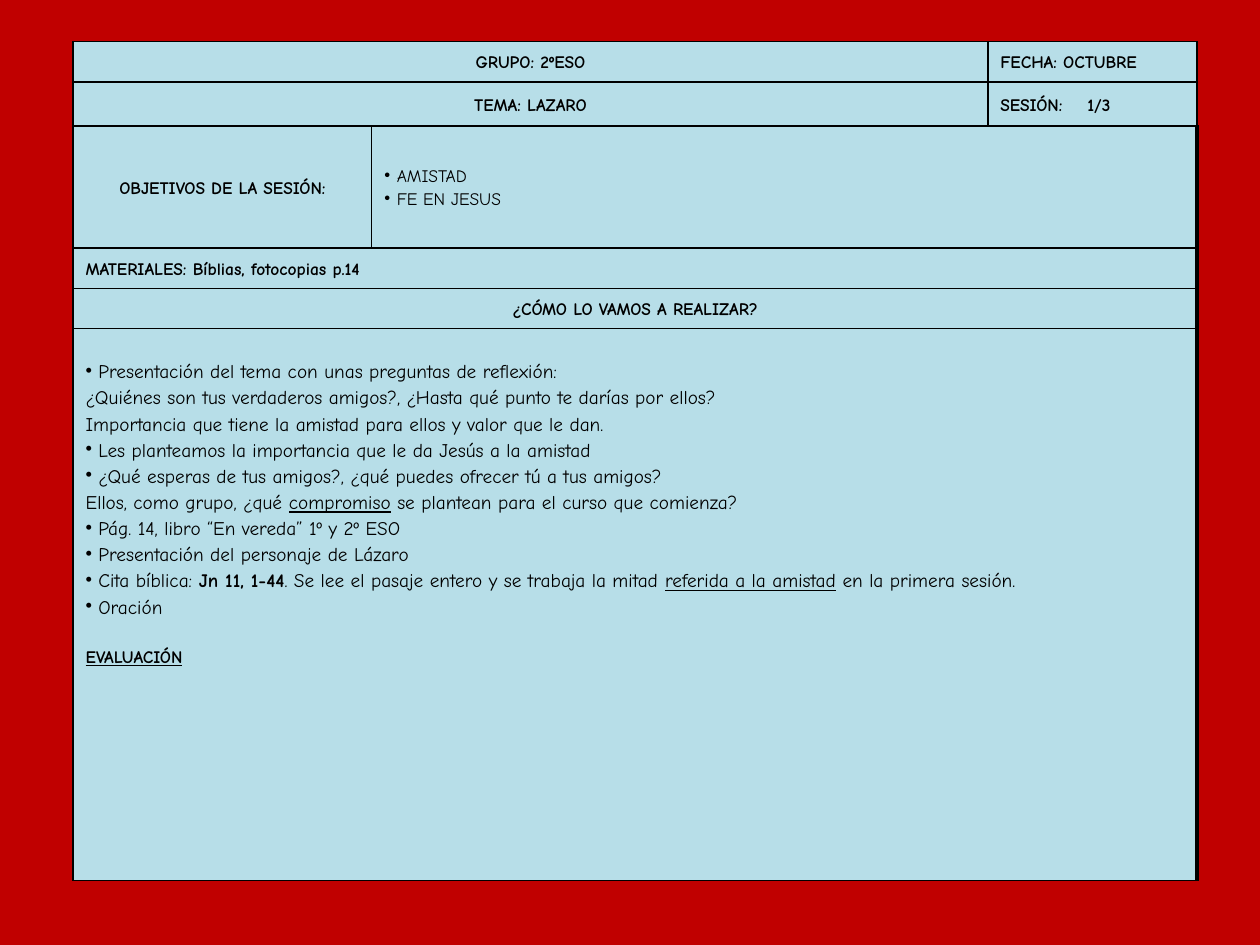
from dataclasses import dataclass

from lxml.etree import SubElement
from pptx import Presentation
from pptx.dml.color import RGBColor
from pptx.enum.text import MSO_ANCHOR as Anchor, PP_ALIGN as Align
from pptx.oxml.ns import qn
from pptx.util import Inches, Pt

RED = RGBColor(0xC0, 0x00, 0x00)
BLUE = RGBColor(0xB7, 0xDE, 0xE8)
BLACK = RGBColor(0x00, 0x00, 0x00)
FONT = "Comic Neue"
COLS = (2.37, 4.89, 1.66)
ROWS = (0.32, 0.35, 0.97, 0.32, 0.32, 4.38)
THIN, THICK = 1, 2.25


@dataclass
class Run:
    text: str
    bold: bool = False
    line: bool = False


@dataclass
class Para:
    runs: tuple[Run, ...]
    size: float = 10
    align: Align = Align.LEFT
    space: float = 1.15
    above: float = 0
    dot: bool = False
    tab: float = 0


@dataclass
class Box:
    row: int
    col: int
    span: int
    paras: tuple[Para, ...]
    edge: float = THIN
    anchor: Anchor = Anchor.MIDDLE
    top: float = 0.05


def head(text: str, **style) -> Para:
    return Para((Run(text, bold=True),), **style)


def goal(text: str) -> Para:
    return Para((Run(text),), dot=True)


def step(*parts: str | Run, dot: bool = True) -> Para:
    runs = tuple(Run(part) if isinstance(part, str) else part for part in parts)
    return Para(runs, size=11, space=1.0, above=2.2, dot=dot)


def write(para, text: str, *, size: float, bold: bool, line: bool) -> None:
    run = para.add_run()
    run.text = text
    font = run.font
    font.name, font.size = FONT, Pt(size)
    font.bold, font.underline = bold, line
    font.color.rgb = BLACK


def fill_para(para, item: Para) -> None:
    para.alignment = item.align
    para.line_spacing = item.space
    para.space_before = Pt(item.above)
    props = para._p.get_or_add_pPr()
    if item.dot:
        props.set("marL", str(Inches(0.1)))
        props.set("indent", str(-Inches(0.1)))
        SubElement(props, qn("a:buChar"), char="•")
    if item.tab:
        tabs = SubElement(props, qn("a:tabLst"))
        SubElement(tabs, qn("a:tab"), pos=str(Inches(item.tab)), algn="l")
    for run in item.runs:
        write(para, run.text, size=item.size, bold=run.bold, line=run.line)


def frame(cell, edge: float) -> None:
    props = cell._tc.get_or_add_tcPr()
    for side, width in zip("LRTB", (THIN, edge, THIN, THIN)):
        line = SubElement(props, qn(f"a:ln{side}"), w=str(Pt(width)))
        paint = SubElement(line, qn("a:solidFill"))
        SubElement(paint, qn("a:srgbClr"), val=str(BLACK))
    cell.fill.solid()
    cell.fill.fore_color.rgb = BLUE


def draw(table, box: Box) -> None:
    last = box.col + box.span - 1
    for col in range(box.col, last + 1):
        frame(table.cell(box.row, col), box.edge)
    cell = table.cell(box.row, box.col)
    if box.span > 1:
        cell.merge(table.cell(box.row, last))
    cell.vertical_anchor = box.anchor
    cell.margin_top = Inches(box.top)
    text = cell.text_frame
    for index, item in enumerate(box.paras):
        para = text.add_paragraph() if index else text.paragraphs[0]
        fill_para(para, item)


PLAN = (
    step("Presentación del tema con unas preguntas de reflexión:"),
    step("¿Quiénes son tus verdaderos amigos?, ¿Hasta qué punto te darías por ellos?", dot=False),
    step("Importancia que tiene la amistad para ellos y valor que le dan.", dot=False),
    step("Les planteamos la importancia que le da Jesús a la amistad"),
    step("¿Qué esperas de tus amigos?, ¿qué puedes ofrecer tú a tus amigos?"),
    step("Ellos, como grupo, ¿qué ", Run("compromiso", line=True),
         " se plantean para el curso que comienza?", dot=False),
    step("Pág. 14, libro “En vereda” 1º y 2º ESO"),
    step("Presentación del personaje de Lázaro"),
    step("Cita bíblica: ", Run("Jn 11, 1-44", bold=True),
         ". Se lee el pasaje entero y se trabaja la mitad ",
         Run("referida a la amistad", line=True), " en la primera sesión."),
    step("Oración"),
    Para((Run("EVALUACIÓN", bold=True, line=True),), above=14.5),
)

BOXES = (
    Box(0, 0, 2, (head("GRUPO: 2ºESO", align=Align.CENTER),)),
    Box(0, 2, 1, (head("FECHA: OCTUBRE"),)),
    Box(1, 0, 2, (head("TEMA: LAZARO", align=Align.CENTER),)),
    Box(1, 2, 1, (head("SESIÓN:\t1/3", tab=0.69),)),
    Box(2, 0, 1, (head("OBJETIVOS DE LA SESIÓN:", align=Align.CENTER),)),
    Box(2, 1, 2, (goal("AMISTAD"), goal("FE EN JESUS")), THICK),
    Box(3, 0, 3, (head("MATERIALES: Bíblias, fotocopias p.14"),), THICK),
    Box(4, 0, 3, (head("¿CÓMO LO VAMOS A REALIZAR?", align=Align.CENTER),), THICK),
    Box(5, 0, 3, PLAN, THICK, Anchor.TOP, 0.26),
)


def main() -> None:
    deck = Presentation()
    deck.slide_width, deck.slide_height = Inches(10), Inches(7.5)
    slide = deck.slides.add_slide(deck.slide_layouts[6])
    back = slide.background.fill
    back.solid()
    back.fore_color.rgb = RED
    table = slide.shapes.add_table(
        len(ROWS), len(COLS), Inches(0.58), Inches(0.33),
        Inches(sum(COLS)), Inches(sum(ROWS))).table
    table.first_row = table.horz_banding = False
    for col, width in zip(table.columns, COLS):
        col.width = Inches(width)
    for row, height in zip(table.rows, ROWS):
        row.height = Inches(height)
    for box in BOXES:
        draw(table, box)
    deck.save("out.pptx")


if __name__ == "__main__":
    main()
